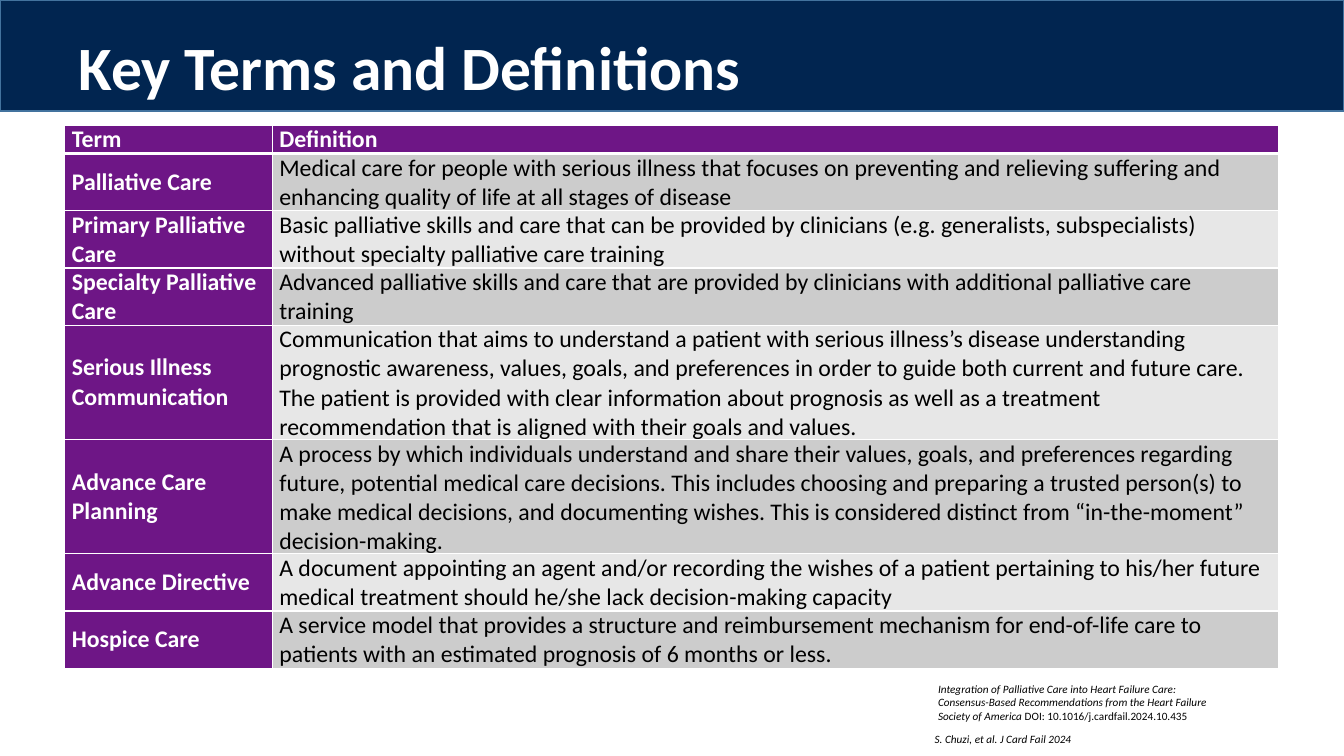
from dataclasses import dataclass
from lxml.etree import SubElement
from pptx import Presentation
from pptx.dml.color import RGBColor as Rgb
from pptx.enum.shapes import MSO_SHAPE as Shape
from pptx.enum.text import MSO_ANCHOR as Anchor, PP_ALIGN as Align
from pptx.oxml.ns import qn
from pptx.util import Cm, Pt


@dataclass(frozen=True)
class Theme:
    font: str = "Calibri"
    navy: str = "012550"
    edge: str = "43739E"
    purple: str = "6E1686"
    dark: str = "CCCCCC"
    light: str = "E7E7E7"
    white: str = "FFFFFF"
    black: str = "000000"
    title: int = 44
    body: int = 17
    small: int = 8


THEME = Theme()

# Term, definition, lines of text in the row
TERMS = [
    ("Palliative Care",
     "Medical care for people with serious illness that focuses on preventing and "
     "relieving suffering and enhancing quality of life at all stages of disease", 2),
    ("Primary Palliative Care",
     "Basic palliative skills and care that can be provided by clinicians (e.g. "
     "generalists, subspecialists) without specialty palliative care training", 2),
    ("Specialty Palliative Care",
     "Advanced palliative skills and care that are provided by clinicians with "
     "additional palliative care training", 2),
    ("Serious Illness Communication",
     "Communication that aims to understand a patient with serious illness’s disease "
     "understanding prognostic awareness, values, goals, and preferences in order to "
     "guide both current and future care. The patient is provided with clear "
     "information about prognosis as well as a treatment recommendation that is "
     "aligned with their goals and values.", 4),
    ("Advance Care Planning",
     "A process by which individuals understand and share their values, goals, and "
     "preferences regarding future, potential medical care decisions. This includes "
     "choosing and preparing a trusted person(s) to make medical decisions, and "
     "documenting wishes. This is considered distinct from “in-the-moment” "
     "decision-making.", 4),
    ("Advance Directive",
     "A document appointing an agent and/or recording the wishes of a patient "
     "pertaining to his/her future medical treatment should he/she lack "
     "decision-making capacity", 2),
    ("Hospice Care",
     "A service model that provides a structure and reimbursement mechanism for "
     "end-of-life care to patients with an estimated prognosis of 6 months or less.", 2),
]


def add_run(para, text, size, color, bold=False, italic=False):
    run = para.add_run()
    run.text = text
    font = run.font
    font.name, font.size = THEME.font, Pt(size)
    font.bold, font.italic = bold, italic
    font.color.rgb = Rgb.from_string(color)


def add_box(slide, left, top, width, height):
    frame = slide.shapes.add_textbox(Cm(left), Cm(top), Cm(width), Cm(height)).text_frame
    frame.word_wrap = True
    return frame


# Title band across the top
def add_head(slide, left, top, width, height):
    band = slide.shapes.add_shape(Shape.RECTANGLE, Cm(left), Cm(top), Cm(width), Cm(height))
    band.shadow.inherit = False
    band.fill.solid()
    band.fill.fore_color.rgb = Rgb.from_string(THEME.navy)
    band.line.color.rgb = Rgb.from_string(THEME.edge)
    band.line.width = Pt(1)
    frame = add_box(slide, left + 1.73, top + 0.74, 28.96, height - 0.74)
    frame.vertical_anchor = Anchor.MIDDLE
    para = frame.paragraphs[0]
    para.line_spacing = 0.9
    add_run(para, "Key Terms and Definitions", THEME.title, THEME.white, bold=True)


def set_edge(cell, sides):
    props = cell._tc.get_or_add_tcPr()
    for side, width in sides.items():
        line = SubElement(props, qn(f"a:ln{side}"), w=str(Pt(width)))
        fill = SubElement(line, qn("a:solidFill"))
        SubElement(fill, qn("a:srgbClr"), val=THEME.white)


def fill_cell(cell, text, fill, head, row):
    cell.margin_left = cell.margin_right = Cm(0.18)
    cell.margin_top = cell.margin_bottom = 0
    set_edge(cell, {"L": 1, "R": 1, "T": 3 if row == 1 else 1, "B": 3 if row == 0 else 1})
    cell.fill.solid()
    cell.fill.fore_color.rgb = Rgb.from_string(fill)
    color = THEME.white if head else THEME.black
    add_run(cell.text_frame.paragraphs[0], text, THEME.body, color, bold=head)


# Table of terms, each row as tall as its lines
def add_terms(slide, left, top, width, line):
    rows = [("Term", "Definition", 1)] + TERMS
    total = line * sum(count for *_, count in rows)
    grid = slide.shapes.add_table(
        len(rows), 2, Cm(left), Cm(top), Cm(width), Cm(total)).table
    first = 5.23
    grid.columns[0].width = Cm(first)
    grid.columns[1].width = Cm(width - first)
    for i, (term, text, count) in enumerate(rows):
        grid.rows[i].height = Cm(line * count)
        name, note = grid.cell(i, 0), grid.cell(i, 1)
        shade = THEME.dark if i % 2 else THEME.light
        fill_cell(name, term, THEME.purple, True, i)
        fill_cell(note, text, THEME.purple if i == 0 else shade, i == 0, i)
        if i:
            name.vertical_anchor = Anchor.MIDDLE


# Source and credit below the table
def add_source(slide, left, top, width, height):
    para = add_box(slide, left, top, width, height).paragraphs[0]
    para.level = 4
    para._p.get_or_add_pPr().set("marL", str(Cm(5.08)))
    add_run(para, "Integration of Palliative Care into Heart Failure Care: "
            "Consensus-Based Recommendations from the Heart Failure Society of America ",
            THEME.small, THEME.black, italic=True)
    add_run(para, "DOI: 10.1016/j.cardfail.2024.10.435", THEME.small, THEME.black)
    para = add_box(slide, left + 3.2, top + 1.29, 7.54, 0.53).paragraphs[0]
    para.alignment = Align.CENTER
    para.line_spacing = 0.9
    add_run(para, "S. Chuzi, et al. J Card Fail 2024", THEME.small, THEME.black, italic=True)


def main():
    deck = Presentation()
    deck.slide_width, deck.slide_height = Cm(33.87), Cm(19.05)
    slide = deck.slides.add_slide(deck.slide_layouts[6])
    add_head(slide, 0, 0, 33.87, 2.8)
    add_source(slide, 18.31, 17.07, 12.6, 1.27)
    add_terms(slide, 1.63, 3.15, 30.58, 0.72)
    deck.save("out.pptx")


if __name__ == "__main__":
    main()
